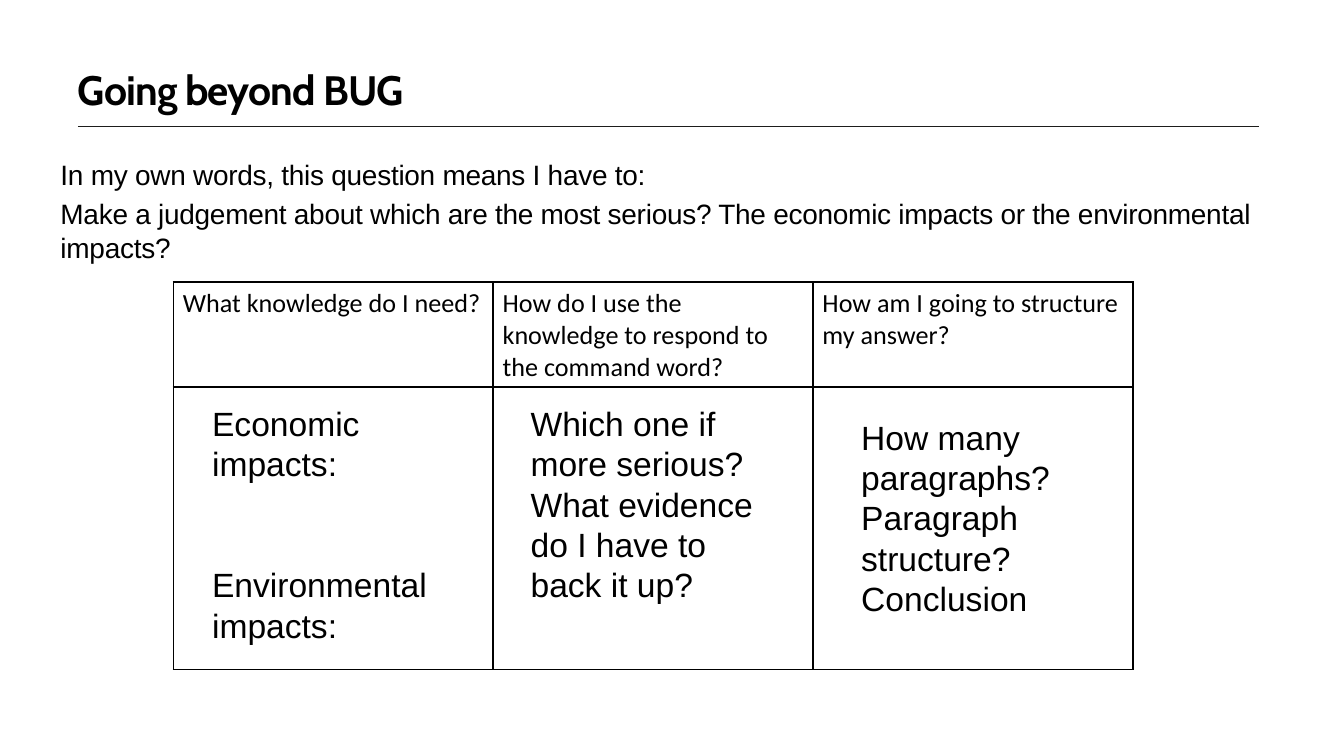
from lxml import etree
from pptx import Presentation
from pptx import util as u
from pptx.dml.color import RGBColor
from pptx.enum import shapes, text
from pptx.oxml import ns

BLACK = RGBColor(0x00, 0x00, 0x00)
RULE_GREY = RGBColor(0x1D, 0x1D, 0x1B)

WIDTH = 10
HEIGHT = WIDTH * 9 / 16
MARGIN = 0.58
COLUMN = 2.38
TABLE_LEFT, TABLE_TOP = 1.29, 2.1
ROWS = (0.75, 2.1)
LABEL_SIZE = (2.06, 2.01)

TITLE = {"name": "Cabin", "size": u.Pt(22), "bold": True}
BODY = {"name": "Arial", "size": u.Pt(15)}
HEADER = {"name": "Calibri", "size": u.Pt(14)}
LABEL = {"name": "Arial", "size": u.Pt(18)}

QUESTIONS = (
    "What knowledge do I need?",
    "How do I use the knowledge to respond to the command word?",
    "How am I going to structure my answer?",
)
ANSWERS = (
    (1.48, 2.95, ("Economic impacts:", "Environmental impacts:"), 43.2),
    (3.85, 2.95, ("Which one if more serious? What evidence do I have to "
                  "back it up?",), 0),
    (6.31, 3.05, ("How many paragraphs?", "Paragraph structure?",
                  "Conclusion"), 0),
)


def write_lines(frame, lines, style, gap=0, tracking=0):
    for index, line in enumerate(lines):
        paragraph = frame.add_paragraph() if index else frame.paragraphs[0]
        paragraph.space_before = u.Pt(gap if index else 0)
        run = paragraph.add_run()
        run.text = line
        run.font.color.rgb = BLACK
        for attribute, value in style.items():
            setattr(run.font, attribute, value)
        if tracking:
            run.font._element.set("spc", str(tracking))


def add_text(slide, box, lines, style, inset=(0, 0), **spacing):
    frame = slide.shapes.add_textbox(*map(u.Inches, box)).text_frame
    horizontal, vertical = map(u.Inches, inset)
    layout = {
        "word_wrap": True,
        "vertical_anchor": text.MSO_ANCHOR.TOP,
        "margin_left": horizontal,
        "margin_right": horizontal,
        "margin_top": vertical,
        "margin_bottom": vertical,
    }
    for attribute, value in layout.items():
        setattr(frame, attribute, value)
    write_lines(frame, lines, style, **spacing)


def add_rule(slide, left, right, top):
    rule = slide.shapes.add_connector(
        shapes.MSO_CONNECTOR.STRAIGHT, *map(u.Inches, (left, top, right, top)))
    rule.line.color.rgb = RULE_GREY
    rule.line.width = u.Pt(0.5)
    etree.SubElement(rule._element.spPr, ns.qn("a:effectLst"))


def set_borders(cell):
    properties = cell._tc.get_or_add_tcPr()
    for position, side in enumerate(("lnL", "lnR", "lnT", "lnB")):
        border = etree.Element(ns.qn(f"a:{side}"), w=str(u.Pt(1)))
        fill = etree.SubElement(border, ns.qn("a:solidFill"))
        etree.SubElement(fill, ns.qn("a:srgbClr"), val=str(BLACK))
        properties.insert(position, border)


def add_planning_table(slide):
    box = (TABLE_LEFT, TABLE_TOP, COLUMN * len(QUESTIONS), sum(ROWS))
    table = slide.shapes.add_table(
        len(ROWS), len(QUESTIONS), *map(u.Inches, box)).table
    table.first_row = table.horz_banding = False
    for column in table.columns:
        column.width = u.Inches(COLUMN)
    for row, height in zip(table.rows, ROWS):
        row.height = u.Inches(height)
    margins = {
        "margin_left": u.Inches(0.07),
        "margin_right": u.Inches(0.07),
        "margin_top": u.Inches(0.04),
        "margin_bottom": u.Inches(0.04),
    }
    for cell in table.iter_cells():
        cell.fill.background()
        set_borders(cell)
        for attribute, value in margins.items():
            setattr(cell, attribute, value)
    for cell, question in zip(table.rows[0].cells, QUESTIONS):
        write_lines(cell.text_frame, (question,), HEADER)


def main():
    deck = Presentation()
    deck.slide_width, deck.slide_height = u.Inches(WIDTH), u.Inches(HEIGHT)
    slide = deck.slides.add_slide(deck.slide_layouts[6])

    add_rule(slide, MARGIN, 9.37, 0.94)
    add_text(slide, (MARGIN, 0.48, 8.78, 0.37), ("Going beyond BUG",),
             TITLE, tracking=-45)
    add_text(slide, (0.45, 1.17, 8.92, 1.09), (
        "In my own words, this question means I have to:",
        "Make a judgement about which are the most serious? "
        "The economic impacts or the environmental impacts?",
    ), BODY, gap=3, tracking=-13)
    add_planning_table(slide)
    for left, top, lines, gap in ANSWERS:
        add_text(slide, (left, top, *LABEL_SIZE), lines, LABEL,
                 inset=(0.1, 0.05), gap=gap)

    deck.save("out.pptx")


if __name__ == "__main__":
    main()
